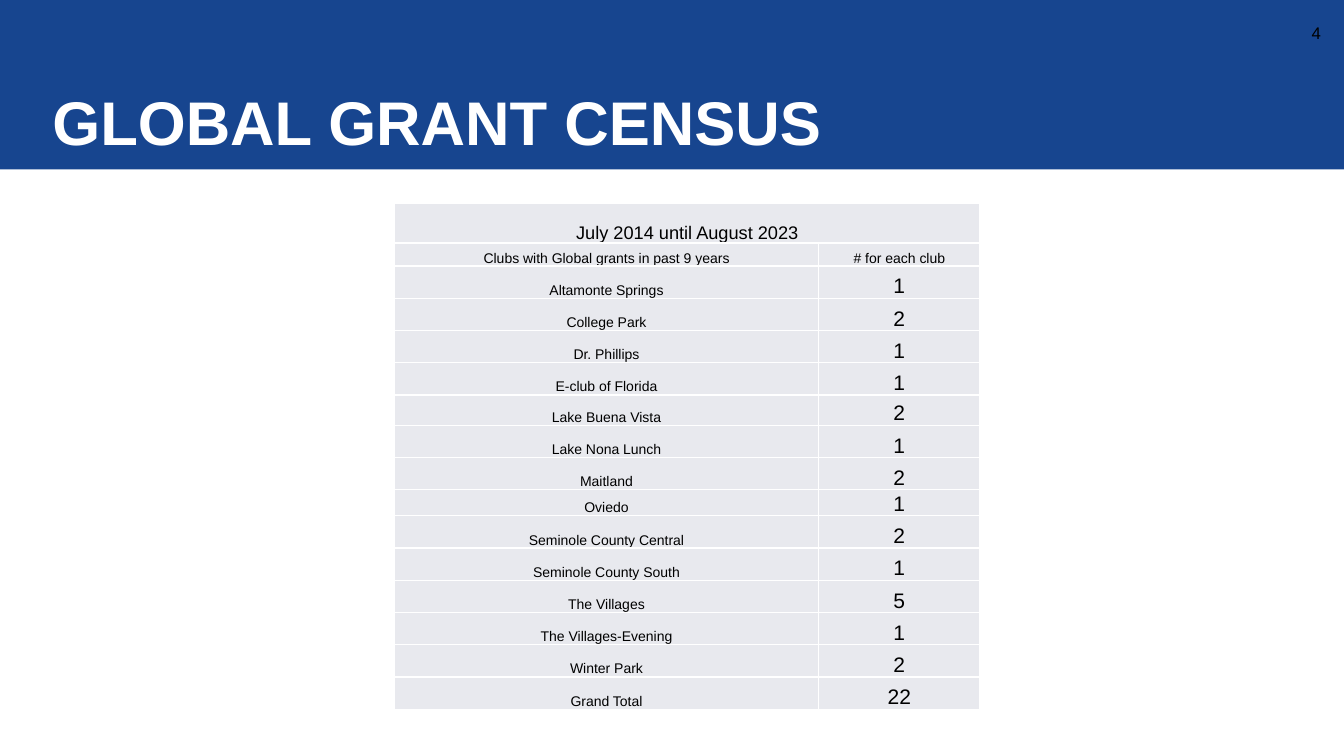
from lxml.etree import SubElement
from pptx import Presentation
from pptx.dml.color import RGBColor
from pptx.enum.shapes import MSO_SHAPE
from pptx.enum.text import MSO_ANCHOR, PP_ALIGN
from pptx.oxml.ns import qn
from pptx.util import Inches, Pt

COLORS = {"band": "17458F", "cell": "E8E9EE", "white": "FFFFFF", "text": "000000"}
WIDTH, HEIGHT, BAND_HEIGHT = 13.33, 7.5, 1.68
COLUMNS = [4.21, 1.6]
ROW_HEIGHT = 0.32
SPECIAL_HEIGHTS = {0: 0.39, 1: 0.23, 6: 0.3, 9: 0.26}
GRANTS = {
    "Altamonte Springs": 1,
    "College Park": 2,
    "Dr. Phillips": 1,
    "E-club of Florida": 1,
    "Lake Buena Vista": 2,
    "Lake Nona Lunch": 1,
    "Maitland": 2,
    "Oviedo": 1,
    "Seminole County Central": 2,
    "Seminole County South": 1,
    "The Villages": 5,
    "The Villages-Evening": 1,
    "Winter Park": 2,
}


def write(frame, text, size, color="text", bold=False, align=PP_ALIGN.CENTER, spacing=1.0):
    para = frame.paragraphs[0]
    para.alignment = align
    para.line_spacing = spacing
    span = para.add_run()
    span.text = text
    span.font.name = "Arial"
    span.font.size = Pt(size)
    span.font.bold = bold
    span.font.color.rgb = RGBColor.from_string(COLORS[color])


def style_cell(cell):
    cell.vertical_anchor = MSO_ANCHOR.BOTTOM
    cell.margin_left = cell.margin_right = cell.margin_top = Inches(0.01)
    cell.margin_bottom = 0
    properties = cell._tc.get_or_add_tcPr()
    for side in ("a:lnL", "a:lnR", "a:lnT", "a:lnB"):
        line = SubElement(properties, qn(side), w=str(Pt(1)))
        fill = SubElement(line, qn("a:solidFill"))
        SubElement(fill, qn("a:srgbClr"), val=COLORS["white"])
    cell.fill.solid()
    cell.fill.fore_color.rgb = RGBColor.from_string(COLORS["cell"])


deck = Presentation()
deck.slide_width, deck.slide_height = Inches(WIDTH), Inches(HEIGHT)
page = deck.slides.add_slide(deck.slide_layouts[5])

# Title on its blue band
title = page.shapes.title
title.left, title.top = Inches(0.42), 0
title.width, title.height = Inches(12.58), Inches(BAND_HEIGHT)
frame = title.text_frame
frame.word_wrap = True
frame.vertical_anchor = MSO_ANCHOR.BOTTOM
frame.margin_left = frame.margin_right = frame.margin_bottom = Inches(0.1)
frame.margin_top = 0
write(frame, "GLOBAL GRANT CENSUS", 44, "white", bold=True, align=PP_ALIGN.LEFT, spacing=0.9)

band = page.shapes.add_shape(MSO_SHAPE.RECTANGLE, 0, 0, deck.slide_width, Inches(BAND_HEIGHT))
band.shadow.inherit = False
band.fill.solid()
band.fill.fore_color.rgb = RGBColor.from_string(COLORS["band"])
band.line.fill.background()
title.element.addprevious(band.element)

# Census table: heading, column names, clubs, total
rows = [
    ("July 2014 until August 2023", ""),
    ("Clubs with Global grants in past 9 years", "# for each club"),
    *GRANTS.items(),
    ("Grand Total", sum(GRANTS.values())),
]
heights = [SPECIAL_HEIGHTS.get(index, ROW_HEIGHT) for index in range(len(rows))]
table = page.shapes.add_table(
    len(rows), len(COLUMNS), Inches(3.91), Inches(2.02),
    Inches(sum(COLUMNS)), Inches(sum(heights)),
).table
table.first_row = table.horz_banding = False
for column, width in zip(table.columns, COLUMNS):
    column.width = Inches(width)
table.cell(0, 0).merge(table.cell(0, 1))
for row_index, values in enumerate(rows):
    table.rows[row_index].height = Inches(heights[row_index])
    for column_index, value in enumerate(values):
        cell = table.cell(row_index, column_index)
        style_cell(cell)
        if cell.is_spanned:
            continue
        size = 13 if row_index == 0 else 15 if isinstance(value, int) else 10
        write(cell.text_frame, str(value), size)

# Page number
box = page.shapes.add_textbox(Inches(12.74), Inches(0.13), Inches(0.46), Inches(0.4))
box.text_frame.word_wrap = True
box.text_frame.vertical_anchor = MSO_ANCHOR.MIDDLE
write(box.text_frame, "4", 12, align=PP_ALIGN.RIGHT)

deck.save("out.pptx")
